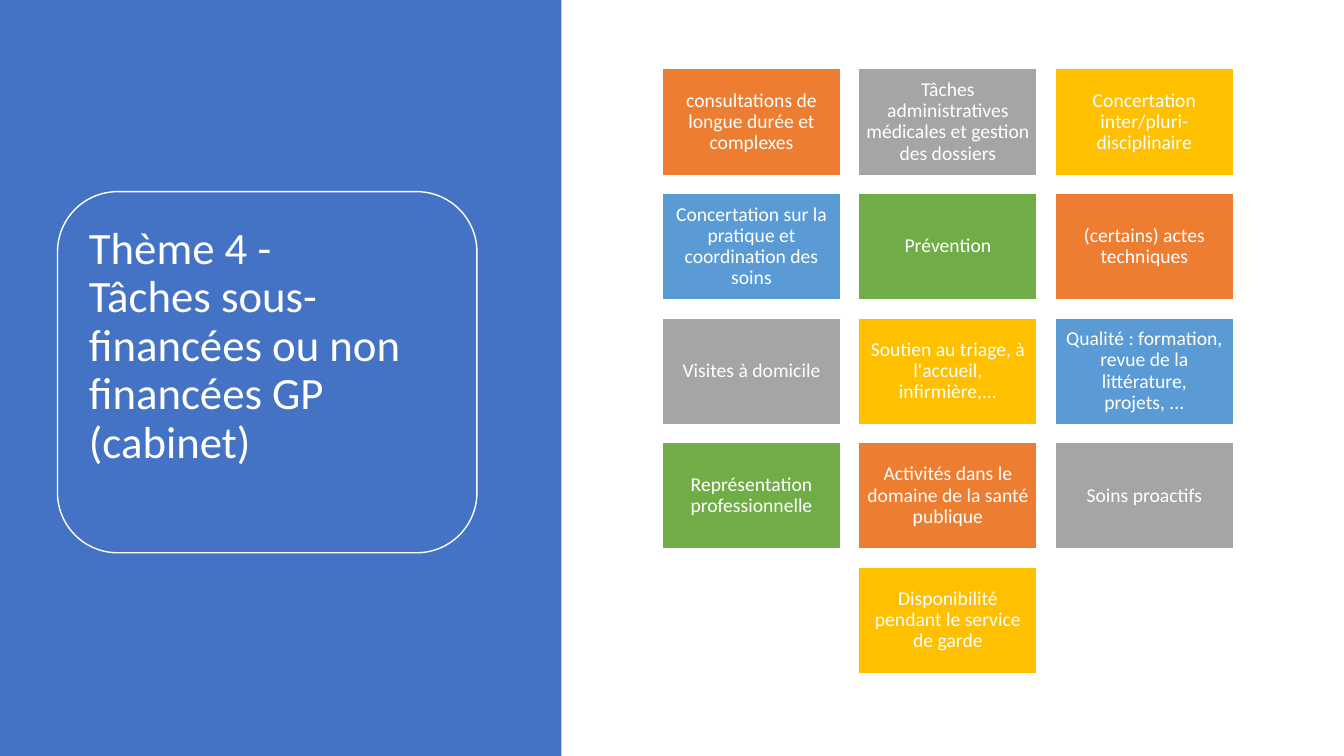
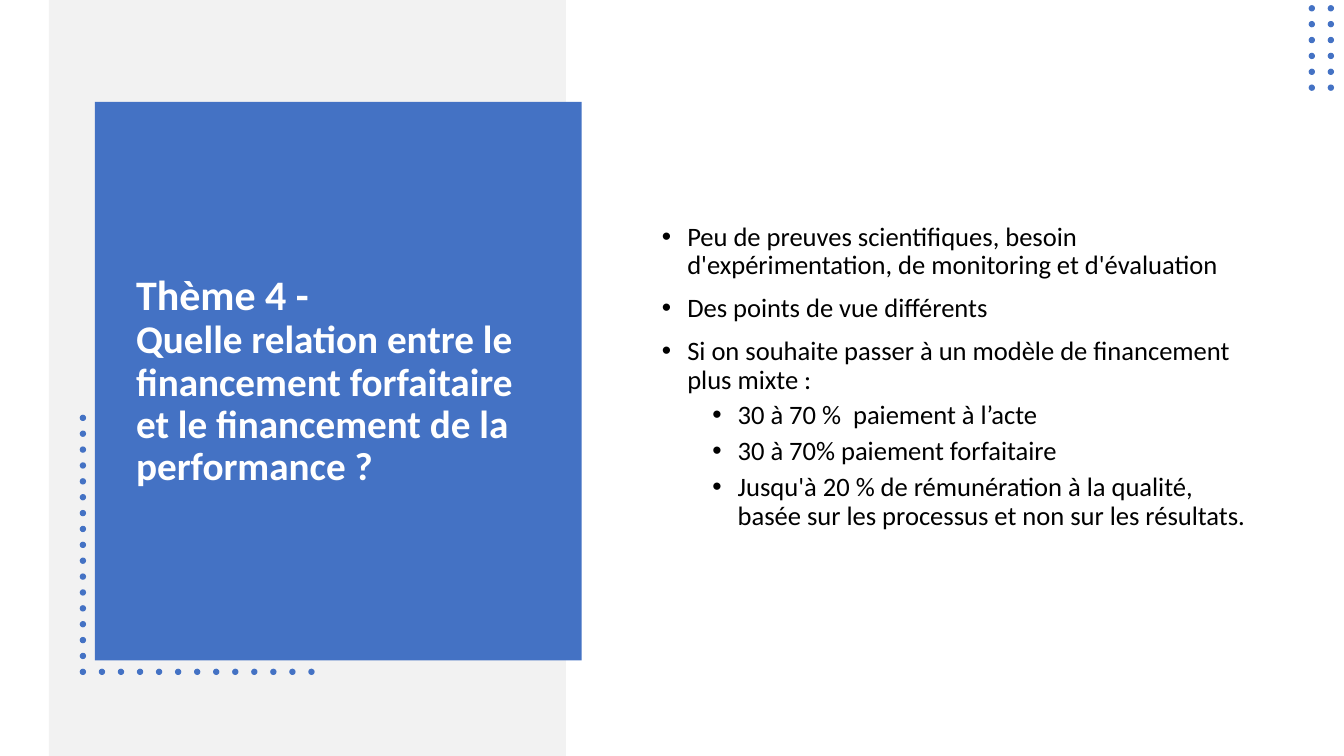
import pptx
import pptx.util
import pptx.dml.color
import pptx.enum.shapes
import pptx.enum.text
import pptx.oxml.ns
import lxml.etree

Cm = pptx.util.Cm
Pt = pptx.util.Pt
ALIGN = pptx.enum.text.PP_ALIGN
SHAPE = pptx.enum.shapes.MSO_SHAPE

COLORS = {
    "blue": "4472C4",
    "orange": "ED7D31",
    "grey": "A5A5A5",
    "yellow": "FFC000",
    "sky": "5B9BD5",
    "green": "70AD47",
    "pale": "F2F2F2",
    "white": "FFFFFF",
    "black": "000000",
}
FONT = "Calibri"
SLIDE_WIDTH, SLIDE_HEIGHT = 33.87, 19.05
TILE_COLORS = ["orange", "grey", "yellow", "sky", "green"]
TILE_COLUMNS = 3
TILE_GAP = 0.45
DOT_SIZE = 0.16
DOT_STEP_X, DOT_STEP_Y = 0.48, 0.4

TASKS = [
    "consultations de longue durée et complexes",
    "Tâches administratives médicales et gestion des dossiers",
    "Concertation inter/pluri-disciplinaire",
    "Concertation sur la pratique et coordination des soins",
    "Prévention",
    "(certains) actes techniques",
    "Visites à domicile",
    "Soutien au triage, à l'accueil, infirmière,...",
    "Qualité : formation, revue de la littérature, projets, ...",
    "Représentation professionnelle",
    "Activités dans le domaine de la santé publique",
    "Soins proactifs",
    "Disponibilité pendant le service de garde",
]
FINDINGS = [
    (0, "Peu de preuves scientifiques, besoin d'expérimentation, de monitoring et d'évaluation"),
    (0, "Des points de vue différents"),
    (0, "Si on souhaite passer à un modèle de financement plus mixte :"),
    (1, "30 à 70 %  paiement à l’acte"),
    (1, "30 à 70% paiement forfaitaire"),
    (1, "Jusqu'à 20 % de rémunération à la qualité, basée sur les processus et non sur les résultats."),
]


def rgb(name):
    return pptx.dml.color.RGBColor.from_string(COLORS[name])


def add_block(slide, box, fill, kind=SHAPE.RECTANGLE, line=None):
    shape = slide.shapes.add_shape(kind, *map(Cm, box))
    shape.shadow.inherit = False
    shape.fill.solid()
    shape.fill.fore_color.rgb = rgb(fill)
    if line:
        shape.line.color.rgb = rgb(line)
        shape.line.width = Pt(1)
    else:
        shape.line.fill.background()
    return shape


def prepare_frame(shape, inset_x, inset_y):
    frame = shape.text_frame
    frame.word_wrap = True
    frame.auto_size = pptx.enum.text.MSO_AUTO_SIZE.NONE
    frame.vertical_anchor = pptx.enum.text.MSO_ANCHOR.MIDDLE
    frame.margin_left = frame.margin_right = Cm(inset_x)
    frame.margin_top = frame.margin_bottom = Cm(inset_y)
    return frame


def place_placeholder(shape, box, inset_x=0.25, inset_y=0.13):
    shape.left, shape.top, shape.width, shape.height = map(Cm, box)
    shape.element.getparent().append(shape.element)
    return prepare_frame(shape, inset_x, inset_y)


def write_paragraph(frame, index, text, size, color, align=ALIGN.LEFT, bold=False, before=0):
    paragraph = frame.add_paragraph() if index else frame.paragraphs[0]
    paragraph.text = text
    paragraph.alignment = align
    paragraph.line_spacing = 0.9
    paragraph.space_before = Pt(before)
    paragraph.font.name = FONT
    paragraph.font.size = Pt(size)
    paragraph.font.bold = bold
    paragraph.font.color.rgb = rgb(color)
    return paragraph


def add_title(slide, box, lines, bold=False, inset=0.25):
    frame = place_placeholder(slide.shapes.title, box, inset)
    for index, (text, size) in enumerate(lines):
        write_paragraph(frame, index, text, size, "white", bold=bold)


def set_bullet(paragraph, level):
    paragraph.level = level
    properties = paragraph._p.get_or_add_pPr()
    properties.set("marL", str(Cm(0.64 + 1.27 * level)))
    properties.set("indent", str(Cm(-0.64)))
    font = lxml.etree.Element(pptx.oxml.ns.qn("a:buFont"), typeface="Arial")
    character = lxml.etree.Element(pptx.oxml.ns.qn("a:buChar"), char="•")
    defaults = properties.find(pptx.oxml.ns.qn("a:defRPr"))
    defaults.addprevious(font)
    defaults.addprevious(character)


def add_bullets(slide, box, items):
    frame = place_placeholder(slide.placeholders[1], box)
    for index, (level, text) in enumerate(items):
        paragraph = write_paragraph(frame, index, text, 19, "black", before=5 if level else 10)
        set_bullet(paragraph, level)


def add_tiles(slide, box, labels):
    left, top, width, height = box
    rows = -(-len(labels) // TILE_COLUMNS)
    tile_width = (width - TILE_GAP * (TILE_COLUMNS - 1)) / TILE_COLUMNS
    tile_height = (height - TILE_GAP * (rows - 1)) / rows
    for index, label in enumerate(labels):
        row, column = divmod(index, TILE_COLUMNS)
        in_row = min(TILE_COLUMNS, len(labels) - row * TILE_COLUMNS)
        column += (TILE_COLUMNS - in_row) / 2
        tile_box = (
            left + column * (tile_width + TILE_GAP),
            top + row * (tile_height + TILE_GAP),
            tile_width,
            tile_height,
        )
        color = TILE_COLORS[index % len(TILE_COLORS)]
        tile = add_block(slide, tile_box, color, line="white")
        frame = prepare_frame(tile, 0.15, 0.15)
        write_paragraph(frame, 0, label, 14, "white", ALIGN.CENTER)


def add_dots(slide, left, top, columns, rows):
    for row in range(rows):
        for column in range(columns):
            dot_box = (left + column * DOT_STEP_X, top + row * DOT_STEP_Y, DOT_SIZE, DOT_SIZE)
            add_block(slide, dot_box, "blue", SHAPE.OVAL)


def build_tasks_slide(presentation):
    slide = presentation.slides.add_slide(presentation.slide_layouts[5])
    add_block(slide, (0, 0, 14.15, SLIDE_HEIGHT), "blue")
    add_block(slide, (1.45, 4.83, 10.57, 9.1), "blue", SHAPE.ROUNDED_RECTANGLE, "white")
    add_title(
        slide,
        (1.91, 5.26, 9.7, 6.96),
        [("Thème 4 -", 32), ("Tâches sous-financées ou non financées GP (cabinet)", 32)],
        inset=0.33,
    )
    add_tiles(slide, (16.69, 1.73, 14.4, 15.25), TASKS)


def build_funding_slide(presentation):
    slide = presentation.slides.add_slide(presentation.slide_layouts[1])
    add_block(slide, (1.23, 0, 13.03, SLIDE_HEIGHT), "pale")
    add_block(slide, (2.39, 2.57, 12.27, 14.07), "blue")
    dots_left, dots_top, dots_down = 2.01, 10.45, 16
    add_dots(slide, dots_left, dots_top, 1, dots_down)
    add_dots(slide, dots_left, dots_top + dots_down * DOT_STEP_Y, 13, 1)
    add_dots(slide, 32.98, 0.13, 2, 6)
    add_title(
        slide,
        (3.18, 3.68, 10.52, 11.89),
        [
            ("Thème 4 -", 30),
            ("Quelle relation entre le financement forfaitaire et le financement de la performance ?", 28),
        ],
        bold=True,
    )
    add_bullets(slide, (16.43, 3.3, 15.44, 12.4), FINDINGS)


def main():
    presentation = pptx.Presentation()
    presentation.slide_width = Cm(SLIDE_WIDTH)
    presentation.slide_height = Cm(SLIDE_HEIGHT)
    build_tasks_slide(presentation)
    build_funding_slide(presentation)
    presentation.save("out.pptx")


if __name__ == "__main__":
    main()
